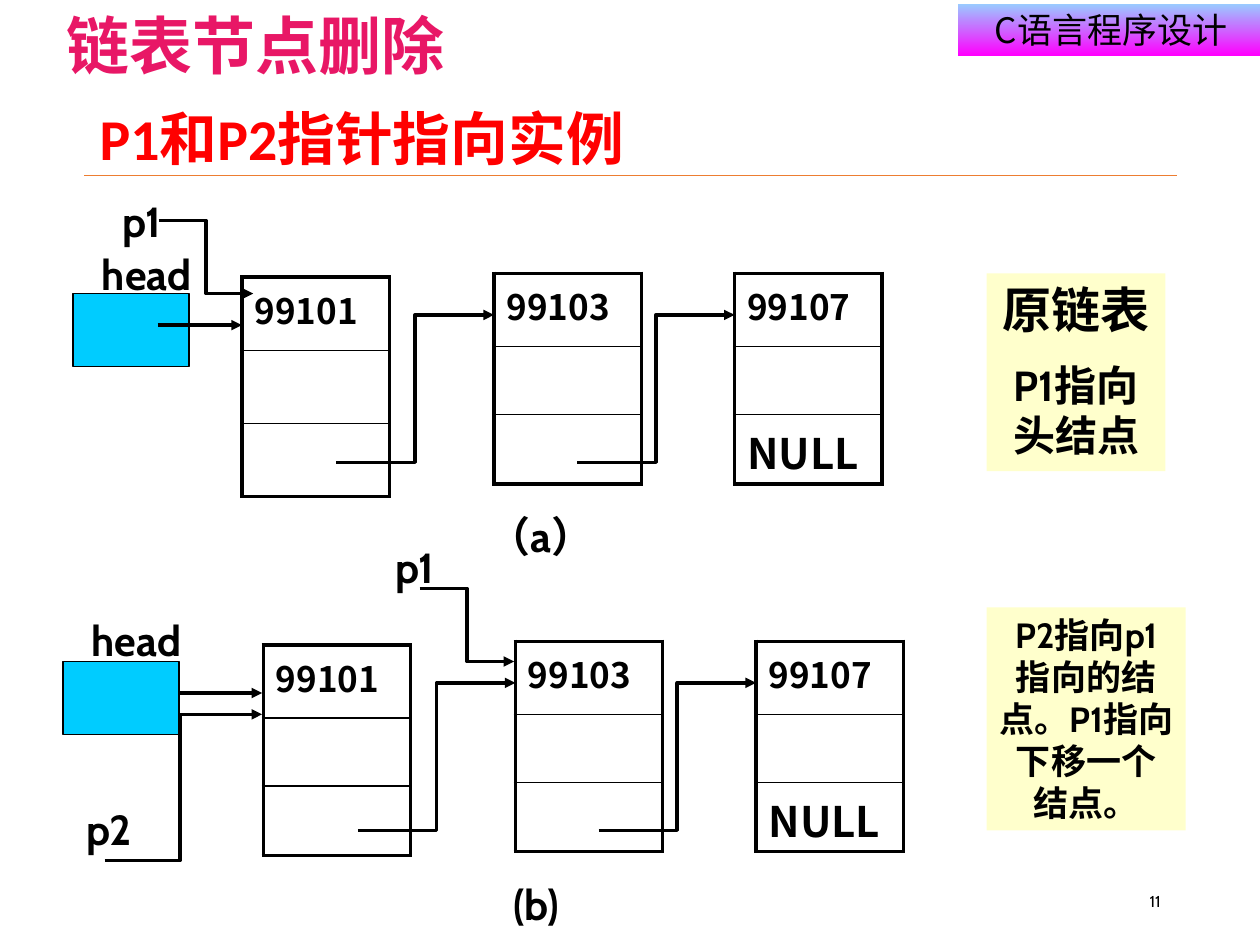
"""Build the slide on deleting a node from a linked list."""
from lxml.etree import SubElement as Sub
from pptx import Presentation
from pptx.dml.color import RGBColor as Rgb
from pptx.enum.shapes import MSO_CONNECTOR as Link, MSO_SHAPE as Shape
from pptx.enum.text import MSO_ANCHOR as Anchor, PP_ALIGN as Align
from pptx.oxml import parse_xml
from pptx.oxml.ns import nsdecls, qn
from pptx.util import Inches, Pt

THEME = {
    "black": "000000", "head": "00CCFF", "note": "FFFFCC", "rule": "ED7D31",
    "band": ("99CCFF", "FF00FF"),
    "thick": 2.25, "thin": 1, "edge": 0.75, "wire": 2, "hair": 0.25,
    "title": {"name": "Calibri", "size": 33, "bold": True, "color": "FF0000"},
    "topic": {"name": "Noto Sans CJK JP", "size": 36, "bold": True, "color": "E81766"},
    "course": {"name": "Noto Sans CJK SC", "size": 20, "bold": False, "color": "000000"},
    "label": {"name": "Cabin", "size": 24, "bold": True, "color": "000000"},
    "large": {"name": "Cabin", "size": 28, "bold": True, "color": "000000"},
    "small": {"name": "Cabin", "size": 20, "bold": True, "color": "000000"},
    "page": {"name": "Cabin", "size": 9, "bold": False, "color": "000000"},
    "code": {"name": "Noto Sans CJK SC", "size": 20, "bold": True, "color": "000000"},
    "null": {"name": "Noto Sans CJK SC", "size": 24, "bold": True, "color": "000000"},
}
TITLE = "P1和P2指针指向实例"
NODES = [
    (1.92, 2.2, ("99101", "", "")),
    (3.92, 2.17, ("99103", "", "")),
    (5.83, 2.17, ("99107", "", "NULL")),
]
ROWS = (0.58, 0.54, 0.55)
TALL = (0.58, 0.58, 0.58)
NEXT = [(2.67, 3.67, 3.92, 2.5), (4.58, 3.67, 5.83, 2.5)]
LISTS = [
    {"shift": (0, 0), "first": TALL, "head": (0.58, 2.33),
     "wires": [(1.25, 2.58, 1.92, 2.58)],
     "bends": [(1.26, 1.75, 2.01, 2.33, 0.5)]},
    {"shift": (0.17, 2.92), "first": ROWS, "head": (0.5, 5.25),
     "wires": [(1.42, 5.5, 2.08, 5.5)],
     "bends": [(0.83, 6.83, 2.08, 5.67, 0.48), (3.33, 4.67, 4.08, 5.25, 0.5)]},
]
LABELS = [
    ("head", 0.58, 1.92, 1.17), ("p1", 0.75, 1.5, 0.75), ("（a）", 3.67, 4, 1.25),
    ("head", 0.5, 4.83, 1.17), ("p1", 2.92, 4.25, 0.75), ("p2", 0.49, 6.33, 0.75),
    ("(b)", 3.92, 6.92, 0.67),
]
NOTES = [
    ((7.83, 2.17, 1.42, 1.57), [("原链表", "large"), ("P1指向头结点", "label")]),
    ((7.83, 4.82, 1.58, 1.77), [("P2指向p1指向的结点。P1指向下移一个结点。", "small")]),
]


def style(run, key):
    look = THEME[key]
    form = {"name": look["name"], "size": Pt(look["size"]), "bold": look["bold"]}
    for name, value in form.items():
        setattr(run.font, name, value)
    run.font.color.rgb = Rgb.from_string(look["color"])
    east = Sub(run.font._element, qn("a:ea"))
    east.set("typeface", look["name"])


def write(frame, lines, align=Align.CENTER, anchor=Anchor.TOP, wrap=True):
    for name, value in {"word_wrap": wrap, "vertical_anchor": anchor}.items():
        setattr(frame, name, value)
    for i, (text, key) in enumerate(lines):
        para = frame.add_paragraph() if i else frame.paragraphs[0]
        para.alignment = align
        if i:
            para.space_before = Pt(THEME[key]["size"] / 2)
        run = para.add_run()
        run.text = text
        style(run, key)


def label(slide, area, text, key, **form):
    box = slide.shapes.add_textbox(*map(Inches, area))
    write(box.text_frame, [(text, key)], **form)


def block(slide, area, fill=None, edge=None):
    shape = slide.shapes.add_shape(Shape.RECTANGLE, *map(Inches, area))
    shape.shadow.inherit = False
    if fill:
        shape.fill.solid()
        shape.fill.fore_color.rgb = Rgb.from_string(fill)
    if edge:
        shape.line.color.rgb = Rgb.from_string(THEME["black"])
        shape.line.width = Pt(edge)
    else:
        shape.line.fill.background()
    return shape


def wire(slide, ends, kind=Link.STRAIGHT, bend=0.5, color="black", width="wire", tip=True):
    line = slide.shapes.add_connector(kind, *map(Inches, ends))
    line.line.color.rgb = Rgb.from_string(THEME[color])
    line.line.width = Pt(THEME[width])
    props = line._element.spPr
    if tip:
        Sub(props.find(qn("a:ln")), qn("a:tailEnd")).set("type", "triangle")
    if bend != 0.5:
        guide = Sub(props.find(qn("a:prstGeom")).find(qn("a:avLst")), qn("a:gd"))
        guide.set("name", "adj1")
        guide.set("fmla", f"val {round(bend * 100000)}")
    Sub(props, qn("a:effectLst"))


def border(cell, sides):
    props = cell._tc.get_or_add_tcPr()
    for i, (side, width) in enumerate(sides.items()):
        props.insert(i, parse_xml(
            f'<a:ln{side} {nsdecls("a")} w="{Pt(width)}"><a:solidFill>'
            f'<a:srgbClr val="{THEME["black"]}"/></a:solidFill></a:ln{side}>'))


def node(slide, left, top, texts, rows):
    area = map(Inches, (left, top, 1.17, sum(rows)))
    table = slide.shapes.add_table(len(rows), 1, *area).table
    for name in ("first_row", "horz_banding"):
        setattr(table, name, False)
    thick, thin = THEME["thick"], THEME["thin"]
    last = len(rows) - 1
    for i, (text, high) in enumerate(zip(texts, rows)):
        table.rows[i].height = Inches(high)
        cell = table.cell(i, 0)
        cell.fill.background()
        border(cell, {"L": thick, "R": thick, "T": thin if i else thick,
                      "B": thick if i == last else thin})
        if text:
            write(cell.text_frame, [(text, "null" if i == last else "code")], Align.LEFT)


def chain(slide, data):
    dx, dy = data["shift"]
    for i, (left, top, texts) in enumerate(NODES):
        node(slide, left + dx, top + dy, texts, ROWS if i else data["first"])
    block(slide, (*data["head"], 0.92, 0.58), THEME["head"], THEME["edge"])
    for ends in data["wires"]:
        wire(slide, ends)
    for x1, y1, x2, y2 in NEXT:
        wire(slide, (x1 + dx, y1 + dy, x2 + dx, y2 + dy), Link.ELBOW)
    for *ends, bend in data["bends"]:
        wire(slide, ends, Link.ELBOW, bend)


def main():
    deck = Presentation()
    deck.slide_width, deck.slide_height = Inches(10), Inches(7.5)
    slide = deck.slides.add_slide(deck.slide_layouts[5])

    band = block(slide, (7.6, 0.03, 2.44, 0.41))
    band.fill.gradient()
    band.fill.gradient_angle = 270
    for stop, color in zip(band.fill.gradient_stops, THEME["band"]):
        stop.color.rgb = Rgb.from_string(color)
    write(band.text_frame, [("C语言程序设计", "course")], anchor=Anchor.MIDDLE)
    label(slide, (0.2, 0, 3.66, 0.41), "链表节点删除", "topic", wrap=False)
    wire(slide, (0.67, 1.39, 9.34, 1.39), color="rule", width="hair", tip=False)

    title = slide.shapes.title
    area = {"left": 0.69, "top": 0.4, "width": 8.62, "height": 1.45}
    for name, value in area.items():
        setattr(title, name, Inches(value))
    write(title.text_frame, [(TITLE, "title")], Align.LEFT, Anchor.MIDDLE)
    title.text_frame.paragraphs[0].line_spacing = 0.9

    for data in LISTS:
        chain(slide, data)
    for text, left, top, width in LABELS:
        label(slide, (left, top, width, 0.5), text, "label")
    for area, lines in NOTES:
        write(block(slide, area, THEME["note"]).text_frame, lines)
    label(slide, (7.06, 6.95, 2.25, 0.4), "11", "page",
          align=Align.RIGHT, anchor=Anchor.MIDDLE)
    deck.save("out.pptx")


if __name__ == "__main__":
    main()
